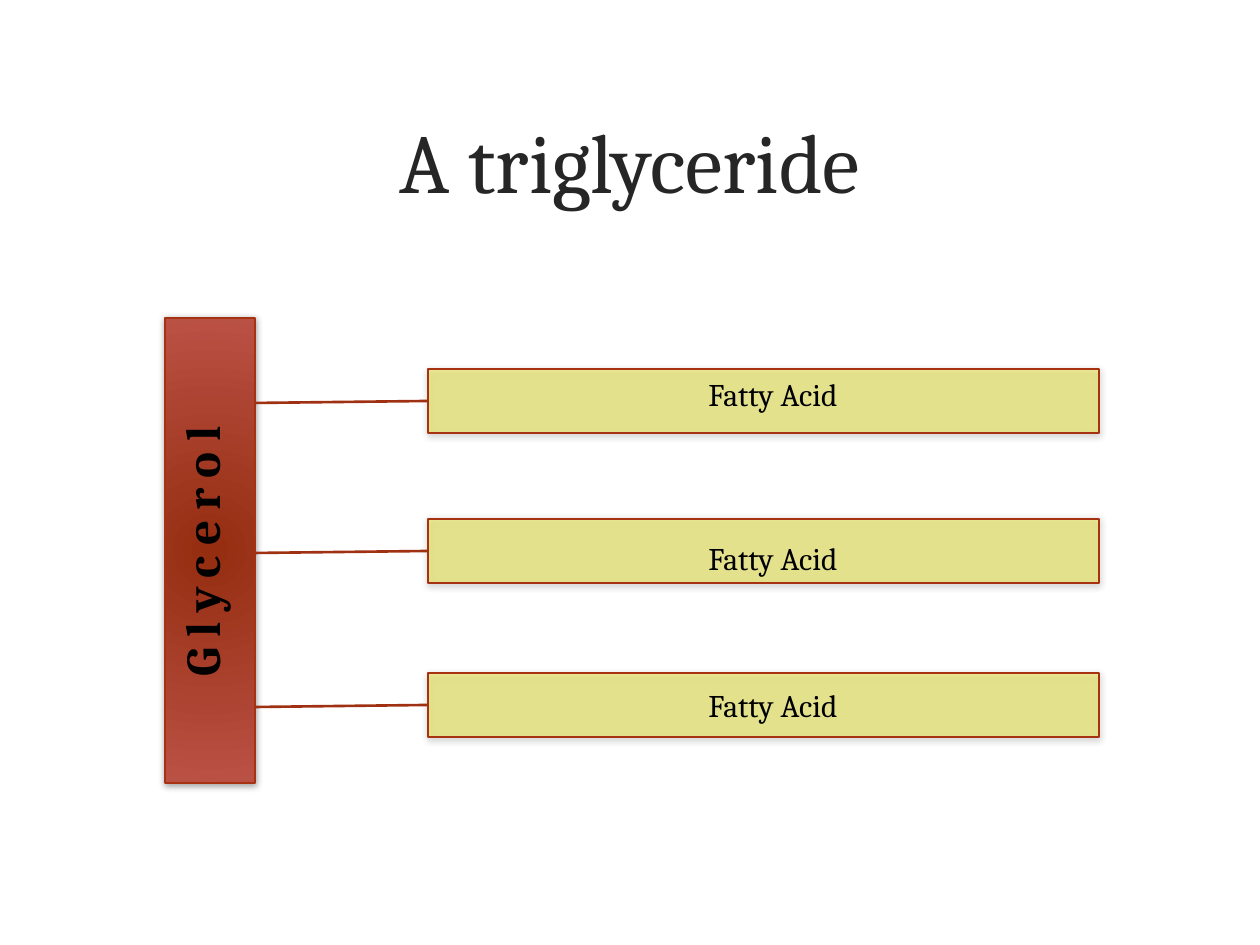
from dataclasses import dataclass

from lxml import etree
from pptx import Presentation
from pptx import util as u
from pptx.dml.color import RGBColor
from pptx.enum import shapes, text
from pptx.oxml import ns, parse_xml

PX = 914400 / 126


@dataclass(frozen=True)
class Theme:
    font: str = "Cambria"
    title: str = "262626"
    ink: str = "000000"
    outline: str = "A63212"
    bond: str = "9F3011"
    acid: str = "F2E900"
    acid_opacity: int = 36
    glycerol_inner: str = "952D10"
    glycerol_outer: str = "BA5145"
    title_size: int = 48
    glycerol_size: int = 28
    acid_size: int = 18


THEME = Theme()
ACID_LEFT, ACID_WIDTH, ACID_HEIGHT = 428, 671, 64
ACID_ROWS = [(369, 369), (519, 533), (673, 680)]  # box top, label top
BOND_RISE = 2


def px(*lengths):
    return [u.Emu(round(length * PX)) for length in lengths]


def child(parent, tag, **attributes):
    return etree.SubElement(parent, ns.qn(tag), attributes)


def add_label(page, place, words, size, color, bold=False,
              anchor=text.MSO_ANCHOR.TOP):
    box = page.shapes.add_textbox(*px(*place))
    frame = box.text_frame
    frame.word_wrap = True
    frame.vertical_anchor = anchor
    para = frame.paragraphs[0]
    para.alignment = text.PP_ALIGN.CENTER
    span = para.add_run()
    span.text = words
    span.font.name = THEME.font
    span.font.size = u.Pt(size)
    span.font.bold = bold
    span.font.color.rgb = RGBColor.from_string(color)
    return box


def add_soft_shadow(shape):
    effects = child(shape._element.spPr, "a:effectLst")
    shadow = child(effects, "a:outerShdw", blurRad=str(u.Pt(4)),
                   dist=str(u.Pt(1)), dir="5400000", rotWithShape="0")
    child(child(shadow, "a:srgbClr", val="000000"), "a:alpha", val="37000")


def add_block(page, place):
    block = page.shapes.add_shape(shapes.MSO_SHAPE.RECTANGLE, *px(*place))
    block.fill.solid()
    block.line.color.rgb = RGBColor.from_string(THEME.outline)
    block.line.width = u.Pt(0.75)
    add_soft_shadow(block)
    return block


def fill_radial(shape, inner, outer):
    """Swap the solid fill for a circular gradient."""
    gradient = parse_xml(
        f'<a:gradFill {ns.nsdecls("a")} rotWithShape="1"><a:gsLst>'
        f'<a:gs pos="0"><a:srgbClr val="{inner}"/></a:gs>'
        f'<a:gs pos="100000"><a:srgbClr val="{outer}"/></a:gs></a:gsLst>'
        '<a:path path="circle"><a:fillToRect l="40000" t="100000" '
        'r="40000" b="100000"/></a:path></a:gradFill>')
    properties = shape._element.spPr
    properties.replace(properties.find(ns.qn("a:solidFill")), gradient)


def add_glycerol(page):
    block = add_block(page, (165, 318, 90, 465))
    fill_radial(block, THEME.glycerol_inner, THEME.glycerol_outer)
    label = add_label(page, (165, 318, 84, 467), "Glycerol",
                      THEME.glycerol_size, THEME.ink, bold=True)
    label.text_frame._txBody.bodyPr.set("vert", "vert270")
    span = label.text_frame.paragraphs[0].runs[0]
    span.font._element.set("spc", "600")


def add_acid(page, top):
    block = add_block(page, (ACID_LEFT, top, ACID_WIDTH, ACID_HEIGHT))
    block.fill.fore_color.rgb = RGBColor.from_string(THEME.acid)
    color = block._element.spPr.find(ns.qn("a:solidFill"))[0]
    child(color, "a:alpha", val=str(THEME.acid_opacity * 1000))
    return block


def add_bond(page, acid, top):
    middle = top + ACID_HEIGHT // 2
    bond = page.shapes.add_connector(
        shapes.MSO_CONNECTOR.STRAIGHT,
        *px(255, middle + BOND_RISE, ACID_LEFT, middle))
    bond.end_connect(acid, 1)
    bond.line.color.rgb = RGBColor.from_string(THEME.bond)
    bond.line.width = u.Pt(1.5)
    child(bond._element.spPr, "a:effectLst")


def main():
    deck = Presentation()
    deck.slide_width, deck.slide_height = px(1260, 945)
    page = deck.slides.add_slide(deck.slide_layouts[6])
    add_label(page, (76, 60, 1108, 199), "A triglyceride", THEME.title_size,
              THEME.title, anchor=text.MSO_ANCHOR.MIDDLE)
    add_glycerol(page)
    for top, label_top in ACID_ROWS:
        add_bond(page, add_acid(page, top), top)
        add_label(page, (489, label_top, 568, 50), "Fatty Acid",
                  THEME.acid_size, THEME.ink)
    deck.save("out.pptx")


if __name__ == "__main__":
    main()
